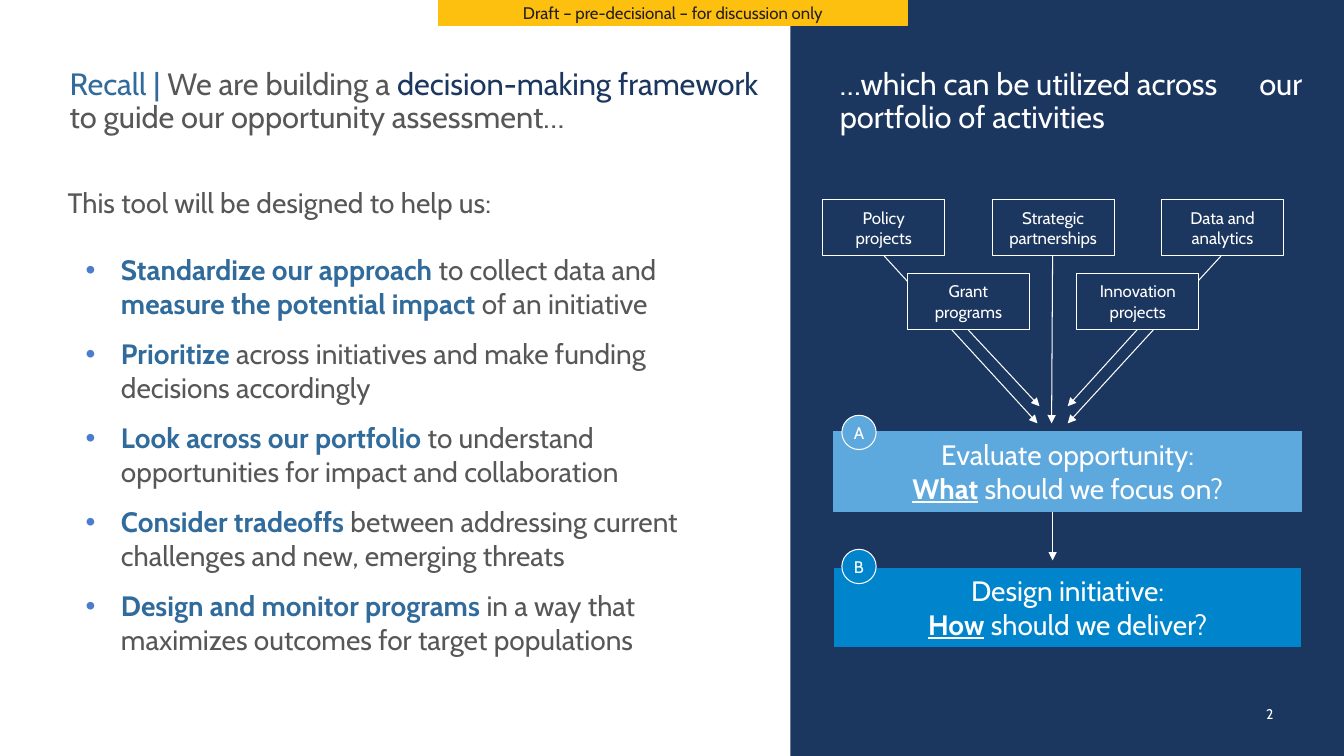
import pptx
import pptx.dml.color
import pptx.enum.shapes
import pptx.enum.text
import pptx.oxml.ns
import pptx.util
from lxml import etree

Inches = pptx.util.Inches
Pt = pptx.util.Pt
qn = pptx.oxml.ns.qn
Shape = pptx.enum.shapes.MSO_SHAPE
Align = pptx.enum.text.PP_ALIGN
Anchor = pptx.enum.text.MSO_ANCHOR

NAVY, BLUE, GRAY, WHITE = "1B365F", "306B9C", "575757", "FFFFFF"
SKY, AZURE, GOLD = "5DA8DD", "0084CB", "FEC00F"


def color(hex_code):
    return pptx.dml.color.RGBColor.from_string(hex_code)


def write(paragraph, size, pieces, align=Align.LEFT):
    paragraph.alignment = align
    for text, hex_code, emphasis in pieces:
        run = paragraph.add_run()
        run.text = text
        run.font.name = "Cabin"
        run.font.size = Pt(size)
        run.font.color.rgb = color(hex_code)
        run.font.bold = "b" in emphasis
        run.font.underline = "u" in emphasis


deck = pptx.Presentation()
deck.slide_width, deck.slide_height = Inches(13.33), Inches(7.5)
slide = deck.slides.add_slide(deck.slide_layouts[5])
slide.background.fill.solid()
slide.background.fill.fore_color.rgb = color(NAVY)

title = slide.shapes.title
left_panel = slide.shapes.add_shape(Shape.RECTANGLE, 0, 0, Inches(7.84), Inches(7.5))
left_panel.shadow.inherit = False
left_panel.fill.solid()
left_panel.fill.fore_color.rgb = color(WHITE)
left_panel.line.fill.background()
title.element.addprevious(left_panel.element)

title.left, title.top = Inches(0.69), Inches(0.68)
title.width, title.height = Inches(6.86), Inches(0.67)
portfolio_heading = slide.shapes.add_textbox(Inches(8.33), Inches(0.68), Inches(4.92), Inches(0.67))
tool_goals = slide.shapes.add_textbox(Inches(0.67), Inches(1.84), Inches(6.58), Inches(5.18))
page_number = slide.shapes.add_textbox(Inches(12.21), Inches(7), Inches(0.42), Inches(0.17))
for area in (title, portfolio_heading, tool_goals, page_number):
    frame = area.text_frame
    frame.margin_left = frame.margin_right = frame.margin_top = frame.margin_bottom = 0
    frame.word_wrap = True
    frame.auto_size = pptx.enum.text.MSO_AUTO_SIZE.NONE
    frame.vertical_anchor = Anchor.TOP
page_number.text_frame.vertical_anchor = Anchor.BOTTOM

heading = title.text_frame.paragraphs[0]
heading.line_spacing = 0.9
write(heading, 22, [
    ("Recall | ", BLUE, ""),
    ("We are building a ", GRAY, ""),
    ("decision-making framework ", NAVY, ""),
    ("to guide our opportunity assessment…", GRAY, ""),
])

heading = portfolio_heading.text_frame.paragraphs[0]
heading.line_spacing = 0.9
tabs = etree.SubElement(heading._p.get_or_add_pPr(), qn("a:tabLst"))
etree.SubElement(tabs, qn("a:tab"), pos=str(Inches(4.16)), algn="l")
write(heading, 22, [("…which can be utilized across\tour portfolio of activities", WHITE, "")])

write(page_number.text_frame.paragraphs[0], 10, [("2", WHITE, "")], Align.RIGHT)

intro = tool_goals.text_frame.paragraphs[0]
intro.space_after = Pt(24)
write(intro, 20, [("This tool will be designed to help us:", GRAY, "")])
goals = [
    [("Standardize our approach ", BLUE, "b"), ("to collect data and ", GRAY, ""),
     ("measure the potential impact", BLUE, "b"), (" of an initiative", GRAY, "")],
    [("Prioritize ", BLUE, "b"),
     ("across initiatives and make funding decisions accordingly", GRAY, "")],
    [("Look across our portfolio ", BLUE, "b"),
     ("to understand opportunities for impact and collaboration", GRAY, "")],
    [("Consider tradeoffs ", BLUE, "b"),
     ("between addressing current challenges and new, emerging threats", GRAY, "")],
    [("Design and monitor programs ", BLUE, "b"),
     ("in a way that maximizes outcomes for target populations", GRAY, "")],
]
for pieces in goals:
    goal = tool_goals.text_frame.add_paragraph()
    goal.space_after = Pt(12)
    props = goal._p.get_or_add_pPr()
    props.set("marL", str(Inches(0.53)))
    props.set("indent", str(Inches(-0.35)))
    bullet_color = etree.SubElement(props, qn("a:buClr"))
    etree.SubElement(bullet_color, qn("a:srgbClr"), val="4A7DCB")
    etree.SubElement(props, qn("a:buFont"), typeface="Arial")
    etree.SubElement(props, qn("a:buChar"), char="•")
    write(goal, 20, pieces)

arrows = [
    (8.77, 2.54, 10.29, 4.2),
    (9.6, 3.27, 10.31, 4.03),
    (10.44, 2.54, 10.43, 4.2),
    (11.28, 3.27, 10.59, 4.03),
    (12.11, 2.54, 10.59, 4.2),
    (10.44, 5.07, 10.44, 5.56),
]
for ends in arrows:
    arrow = slide.shapes.add_connector(
        pptx.enum.shapes.MSO_CONNECTOR.STRAIGHT, *[Inches(end) for end in ends])
    arrow.line.color.rgb = color(WHITE)
    arrow.line.width = Pt(0.75)
    outline = arrow.element.spPr.find(qn("a:ln"))
    etree.SubElement(outline, qn("a:tailEnd"), type="triangle")
    etree.SubElement(arrow.element.spPr, qn("a:effectLst"))

activities = ["Policy projects", "Grant programs", "Strategic partnerships",
              "Innovation projects", "Data and analytics"]
blocks = [
    (Shape.RECTANGLE, (8.16 + 0.84 * i, 1.98 + 0.73 * (i % 2), 1.21, 0.56),
     NAVY, WHITE, 12, 0.13, [[(activity, WHITE, "")]])
    for i, activity in enumerate(activities)
]
steps = [
    ("A", 4.28, 4.12, SKY, SKY, "Evaluate opportunity:", "What", " should we focus on?"),
    ("B", 5.63, 5.45, AZURE, NAVY, "Design initiative:", "How", " should we deliver?"),
]
for letter, top, badge_top, fill, border, name, key_word, question in steps:
    blocks += [
        (Shape.RECTANGLE, (8.27, top, 4.64, 0.79), fill, border, 20, 0.1,
         [[(name, WHITE, "")], [(key_word, WHITE, "bu"), (question, WHITE, "")]]),
        (Shape.OVAL, (8.35, badge_top, 0.34, 0.34), fill, WHITE, 12, 0, [[(letter, WHITE, "")]]),
    ]
blocks.append((Shape.RECTANGLE, (4.35, 0, 4.65, 0.25), GOLD, GOLD, 12, 0.1,
               [[("Draft – pre-decisional – for discussion only", "231F20", "")]]))

for kind, place, fill, border, size, margin, lines in blocks:
    block = slide.shapes.add_shape(kind, *[Inches(length) for length in place])
    block.shadow.inherit = False
    block.fill.solid()
    block.fill.fore_color.rgb = color(fill)
    block.line.color.rgb = color(border)
    block.line.width = Pt(0.75)
    frame = block.text_frame
    frame.word_wrap = True
    frame.vertical_anchor = Anchor.MIDDLE
    frame.margin_left = frame.margin_right = Inches(margin)
    frame.margin_top = frame.margin_bottom = 0
    for number, pieces in enumerate(lines):
        paragraph = frame.add_paragraph() if number else frame.paragraphs[0]
        write(paragraph, size, pieces, Align.CENTER)

deck.save("out.pptx")
